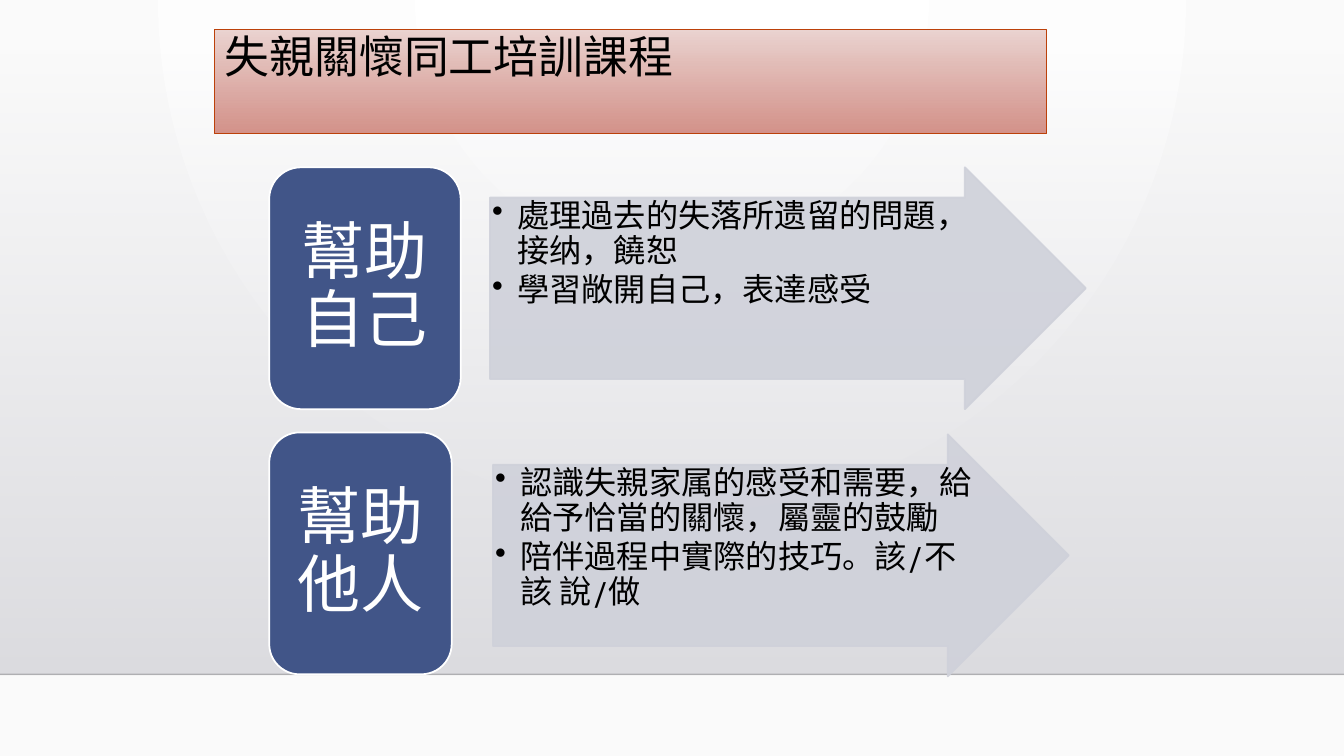
from lxml.etree import SubElement
from pptx import Presentation
from pptx.dml.color import RGBColor
from pptx.enum.shapes import MSO_CONNECTOR, MSO_SHAPE
from pptx.enum.text import MSO_ANCHOR, PP_ALIGN
from pptx.oxml import parse_xml
from pptx.oxml.ns import nsdecls, qn
from pptx.util import Inches, Pt

FONT = "TeX Gyre Adventor"
BLACK, WHITE, NAVY, PALE = "000000", "FFFFFF", "415588", "CFD1DA"
TITLE = "失親關懷同工培訓課程"
TOPICS = [
    ((2.67, 1.66, 8.1, 2.4), 1.9, 2.19, 0, "幫助自己",
     ["處理過去的失落所遗留的問題，接纳，饒恕", "學習敞開自己，表達感受"]),
    ((2.67, 4.29, 7.93, 2.4), 1.81, 2.22, 0.02, "幫助他人",
     ["認識失親家属的感受和需要，給給予恰當的關懷，屬靈的鼓勵",
      "陪伴過程中實際的技巧。該/不該 說/做"]),
]


def color(text):
    """Turn a hex string into a colour."""
    return RGBColor.from_string(text)


def paint(fill, text, alpha=100):
    """Fill with one colour at the given opacity in percent."""
    fill.solid()
    fill.fore_color.rgb = color(text)
    if alpha < 100:
        choice = fill._xPr.find(qn("a:solidFill"))[0]
        SubElement(choice, qn("a:alpha"), val=str(alpha * 1000))


def outline(shape, text, width, alpha=100):
    """Draw the line of a shape or connector."""
    shape.line.width = Pt(width)
    paint(shape.line.fill, text, alpha)


def gradient(fill, stops, direction):
    """Fill with (position, colour, opacity) stops and a direction element."""
    fill.solid()
    marks = "".join(
        f'<a:gs pos="{place * 1000}"><a:srgbClr val="{text}">'
        f'<a:alpha val="{alpha * 1000}"/></a:srgbClr></a:gs>'
        for place, text, alpha in stops)
    solid = fill._xPr.find(qn("a:solidFill"))
    solid.getparent().replace(solid, parse_xml(
        f'<a:gradFill {nsdecls("a")} rotWithShape="1">'
        f"<a:gsLst>{marks}</a:gsLst>{direction}</a:gradFill>"))


def set_margins(frame, across, down):
    """Set the four insets of a text frame."""
    frame.margin_left = frame.margin_right = Inches(across)
    frame.margin_top = frame.margin_bottom = Inches(down)


def format_text(para, size, text, align):
    """Format a paragraph and its runs."""
    para.alignment = align
    para.line_spacing = 0.9
    for span in para.runs:
        span.font.name = FONT
        span.font.size = Pt(size)
        span.font.color.rgb = color(text)


def add_bullet(para):
    """Give a paragraph a hanging bullet."""
    properties = para._p.get_or_add_pPr()
    properties.set("marL", str(Inches(0.25)))
    properties.set("indent", str(-Inches(0.25)))
    SubElement(properties, qn("a:buChar"), char="•")


def add_shape(page, kind, box):
    """Add a preset shape without a shadow."""
    shape = page.shapes.add_shape(kind, *map(Inches, box))
    shape.shadow.inherit = False
    return shape


def add_backdrop(page, box):
    """Paint the background, the shaded wall and the floor line."""
    down = '<a:lin ang="5400000" scaled="0"/>'
    gradient(page.background.fill, [(0, WHITE, 100), (100, "FAFAFA", 100)],
             '<a:path path="circle">'
             '<a:fillToRect l="43000" t="0" r="43000" b="100000"/></a:path>')
    wall = add_shape(page, MSO_SHAPE.RECTANGLE, box)
    gradient(wall.fill, [(0, "DCDCE0", 0), (100, "DEDEE2", 100)], down)
    wall.line.fill.background()
    left, top, width, height = box
    floor = page.shapes.add_connector(
        MSO_CONNECTOR.STRAIGHT, Inches(left), Inches(top + height),
        Inches(left + width), Inches(top + height))
    outline(floor, "000001", 1, 20)
    SubElement(floor._element.spPr, qn("a:effectLst"))


def add_title(page, box):
    """Format the title placeholder and bring it above the backdrop."""
    title = page.shapes.title
    page.shapes._spTree.append(title._element)
    title.left, title.top, title.width, title.height = map(Inches, box)
    gradient(title.fill, [(0, "EBD4D1", 100), (100, "D18A81", 92)],
             '<a:lin ang="5400000" scaled="0"/>')
    outline(title, "BC410A", 0.75)
    frame = title.text_frame
    frame.text = TITLE
    frame.word_wrap = True
    frame.vertical_anchor = MSO_ANCHOR.TOP
    set_margins(frame, 0.1, 0.05)
    format_text(frame.paragraphs[0], 32, BLACK, PP_ALIGN.LEFT)


def add_topic(page, box, label_width, arrow_offset, arrow_drop, label, points):
    """Place a rounded label and an arrow with its bullet points."""
    left, top, width, height = box
    arrow = add_shape(page, MSO_SHAPE.RIGHT_ARROW,
                      (left + arrow_offset, top + arrow_drop,
                       width - arrow_offset, height))
    arrow.adjustments[0], arrow.adjustments[1] = 0.75, 0.5
    paint(arrow.fill, PALE, 90)
    outline(arrow, PALE, 1.25, 90)
    frame = arrow.text_frame
    frame.text = "\n".join(points)
    frame.word_wrap = True
    frame.vertical_anchor = MSO_ANCHOR.TOP
    set_margins(frame, 0.02, 0.02)
    for para in frame.paragraphs:
        para.space_after = Pt(3.5)
        add_bullet(para)
        format_text(para, 23, BLACK, PP_ALIGN.LEFT)

    badge = add_shape(page, MSO_SHAPE.ROUNDED_RECTANGLE,
                      (left, top, label_width, height))
    paint(badge.fill, NAVY)
    outline(badge, WHITE, 1.25)
    frame = badge.text_frame
    frame.text = label
    frame.word_wrap = True
    frame.vertical_anchor = MSO_ANCHOR.MIDDLE
    set_margins(frame, 0.19, 0.09)
    format_text(frame.paragraphs[0], 45, WHITE, PP_ALIGN.CENTER)


def main():
    """Build the slide and save it."""
    deck = Presentation()
    deck.slide_width, deck.slide_height = Inches(13.33), Inches(7.5)
    page = deck.slides.add_slide(deck.slide_layouts[5])
    add_backdrop(page, (0, 0.51, 13.33, 6.18))
    add_title(page, (2.13, 0.29, 8.25, 1.03))
    for topic in TOPICS:
        add_topic(page, *topic)
    deck.save("out.pptx")


if __name__ == "__main__":
    main()
